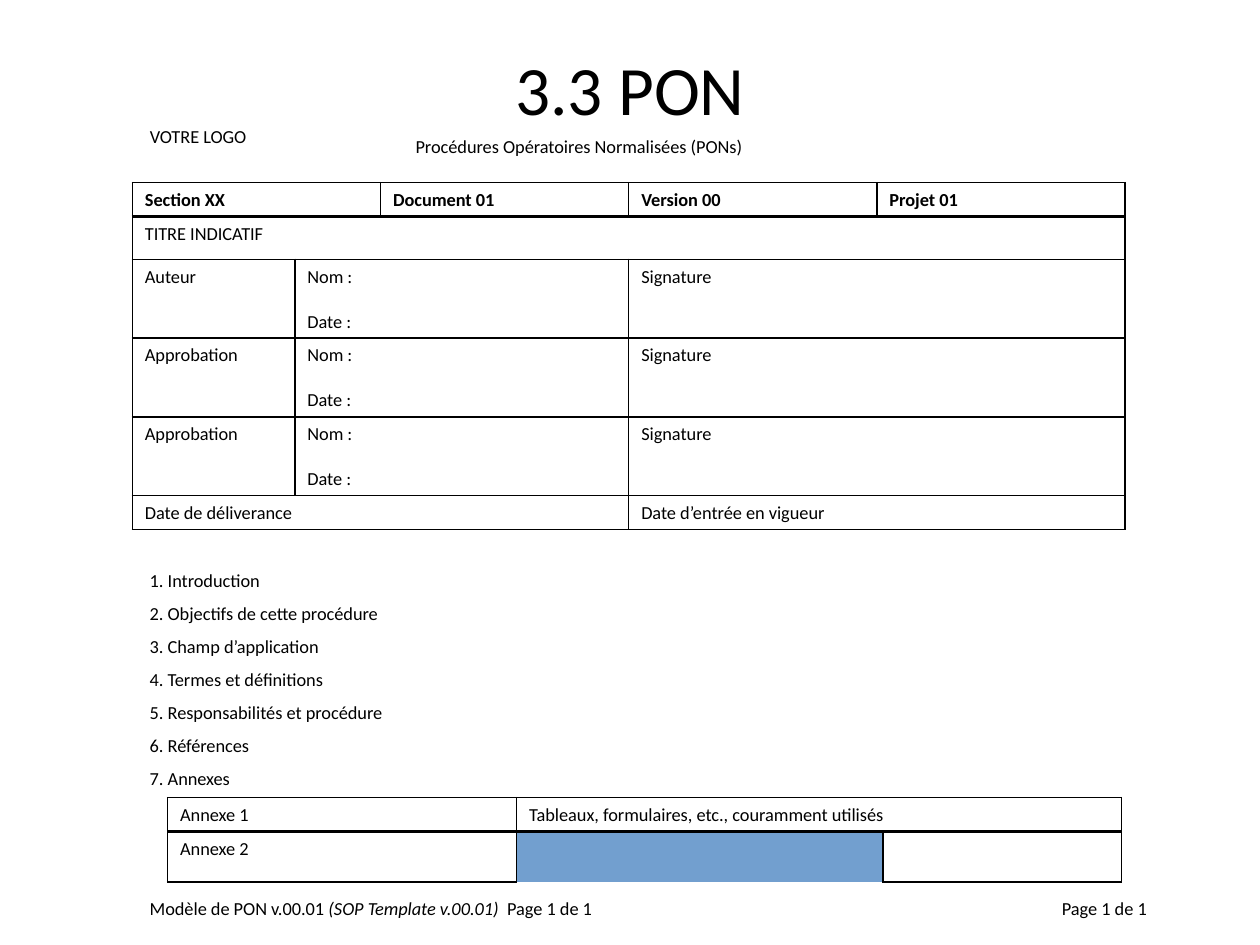
from pptx import Presentation
from pptx.dml.color import RGBColor
from pptx.enum.text import MSO_ANCHOR, MSO_AUTO_SIZE, PP_ALIGN
from pptx.oxml import parse_xml
from pptx.oxml.ns import nsdecls
from pptx.util import Inches, Pt

THEME = {
    "font": "Calibri", "ink": "000000", "paper": "FFFFFF", "accent": "729FCF",
    "title": 39.6, "body": 10.5, "thin": 1, "thick": 2,
}

TITLE = "3.3 PON"
OUTLINE = [
    "Introduction", "Objectifs de cette procédure", "Champ d’application",
    "Termes et définitions", "Responsabilités et procédure", "Références", "Annexes",
]

# Text boxes: left, top, width, height, wrap, line spacing, paragraphs of (text, italic) runs
TEXT_BOXES = [
    (1.09, 4.38, 5, 1.93, True, 1.5,
     [[(f"{number}. {name}", False)] for number, name in enumerate(OUTLINE, 1)]),
    (1.09, 7.07, 5, 0.28, True, 1, [[
        ("Modèle de PON v.00.01 ", False), ("(SOP Template v.00.01) ", True),
        (" Page 1 de 1", False)]]),
    (8.33, 7.07, 0.89, 0.28, False, 1, [[("Page 1 de 1", False)]]),
    (1.09, 0.94, 0.99, 0.28, False, 1, [[("VOTRE LOGO", False)]]),
    (3.2, 1.02, 5.7, 0.28, True, 1, [[("Procédures Opératoires Normalisées (PONs)", False)]]),
]

# Table rows: height, cells as (column span, lines of text)
SIGNERS = ["Auteur", "Approbation", "Approbation"]
HEADER_TABLE = {
    "at": (1.05, 1.45), "columns": [1.29, 0.68, 1.97, 1.97, 1.97], "bold_header": True,
    "rows": [
        (0.27, [(2, ["Section XX"]), (1, ["Document 01"]), (1, ["Version 00"]),
                (1, ["Projet 01"])]),
        (0.34, [(5, ["TITRE INDICATIF"])]),
        *[(0.62, [(1, [role]), (2, ["Nom :", "Date :"]), (2, ["Signature"])])
          for role in SIGNERS],
        (0.27, [(3, ["Date de déliverance"]), (2, ["Date d’entrée en vigueur"])]),
    ],
}
ANNEX_TABLE = {
    "at": (1.33, 6.33), "columns": [1.24, 0.65, 0.88, 2.91, 1.89], "bold_header": False,
    "rows": [
        (0.27, [(3, ["Annexe 1"]), (2, ["Tableaux, formulaires, etc., couramment utilisés"])]),
        (0.4, [(3, ["Annexe 2"]), (1, []), (1, [])]),
    ],
    "highlight": (1, 3),
}


def add_run(paragraph, text, size=THEME["body"], bold=False, italic=False):
    run = paragraph.add_run()
    run.text = text
    font = run.font
    font.name, font.size, font.bold, font.italic = THEME["font"], Pt(size), bold, italic
    font.color.rgb = RGBColor.from_string(THEME["ink"])


def next_paragraph(frame, index):
    return frame.paragraphs[0] if index == 0 else frame.add_paragraph()


def add_text_box(slide, left, top, width, height, wrap, spacing, paragraphs):
    shape = slide.shapes.add_textbox(*map(Inches, (left, top, width, height)))
    frame = shape.text_frame
    frame.word_wrap = wrap
    frame.auto_size = MSO_AUTO_SIZE.SHAPE_TO_FIT_TEXT
    for index, runs in enumerate(paragraphs):
        paragraph = next_paragraph(frame, index)
        paragraph.line_spacing = float(spacing)
        for text, italic in runs:
            add_run(paragraph, text, italic=italic)


def set_borders(cell, widths):
    """Draw the sides in widths (L, R, T, B); a width of 0 hides the side."""
    properties = cell._tc.get_or_add_tcPr()
    for side, width in widths.items():
        paint = (f'<a:solidFill><a:srgbClr val="{THEME["ink"]}"/></a:solidFill>'
                 if width else "<a:noFill/>")
        properties.append(parse_xml(
            f'<a:ln{side} {nsdecls("a")} w="{Pt(width)}">{paint}</a:ln{side}>'))


def fill_cell(cell, lines, bold):
    cell.margin_bottom = Inches(0.04)
    for index, line in enumerate(lines):
        paragraph = next_paragraph(cell.text_frame, index)
        if index:
            paragraph.space_before = Pt(13)
        add_run(paragraph, line, bold=bold)
    if not lines:
        cell.text_frame.paragraphs[0].font.size = Pt(THEME["body"])


def add_grid(slide, data):
    columns, rows = data["columns"], data["rows"]
    heights = [height for height, _ in rows]
    size = (sum(columns), sum(heights))
    table = slide.shapes.add_table(
        len(rows), len(columns), *map(Inches, data["at"] + size)).table
    table.first_row = table.horz_banding = False
    for column, width in zip(table.columns, columns):
        column.width = Inches(width)

    for row_index, (height, cells) in enumerate(rows):
        table.rows[row_index].height = Inches(height)
        # Borders and fills, with a thick rule under the first row
        for column_index in range(len(columns)):
            cell = table.cell(row_index, column_index)
            highlighted = data.get("highlight") == (row_index, column_index)
            widths = dict.fromkeys("LRTB", THEME["thin"])
            if row_index == 0:
                widths["B"] = THEME["thick"]
            elif row_index == 1:
                widths["T"] = THEME["thick"]
            if highlighted:
                widths["B"] = 0
            set_borders(cell, widths)
            cell.fill.solid()
            cell.fill.fore_color.rgb = RGBColor.from_string(
                THEME["accent" if highlighted else "paper"])
        # Merged cells and text
        start = 0
        for span, lines in cells:
            cell = table.cell(row_index, start)
            if span > 1:
                cell.merge(table.cell(row_index, start + span - 1))
            fill_cell(cell, lines, data["bold_header"] and row_index == 0)
            start += span


def main():
    presentation = Presentation()
    presentation.slide_width, presentation.slide_height = Inches(10), Inches(7.5)
    slide = presentation.slides.add_slide(presentation.slide_layouts.get_by_name("Title Only"))

    # Title
    title = slide.shapes.title
    title.left, title.top, title.width, title.height = map(Inches, (0.5, 0.3, 9, 0.79))
    title.text_frame.vertical_anchor = MSO_ANCHOR.MIDDLE
    title.text_frame.auto_size = MSO_AUTO_SIZE.NONE
    paragraph = title.text_frame.paragraphs[0]
    paragraph.alignment = PP_ALIGN.CENTER
    add_run(paragraph, TITLE, THEME["title"])

    # Tables, then outline, footer and heading texts
    for data in (HEADER_TABLE, ANNEX_TABLE):
        add_grid(slide, data)
    for box in TEXT_BOXES:
        add_text_box(slide, *box)

    presentation.save("out.pptx")


if __name__ == "__main__":
    main()
